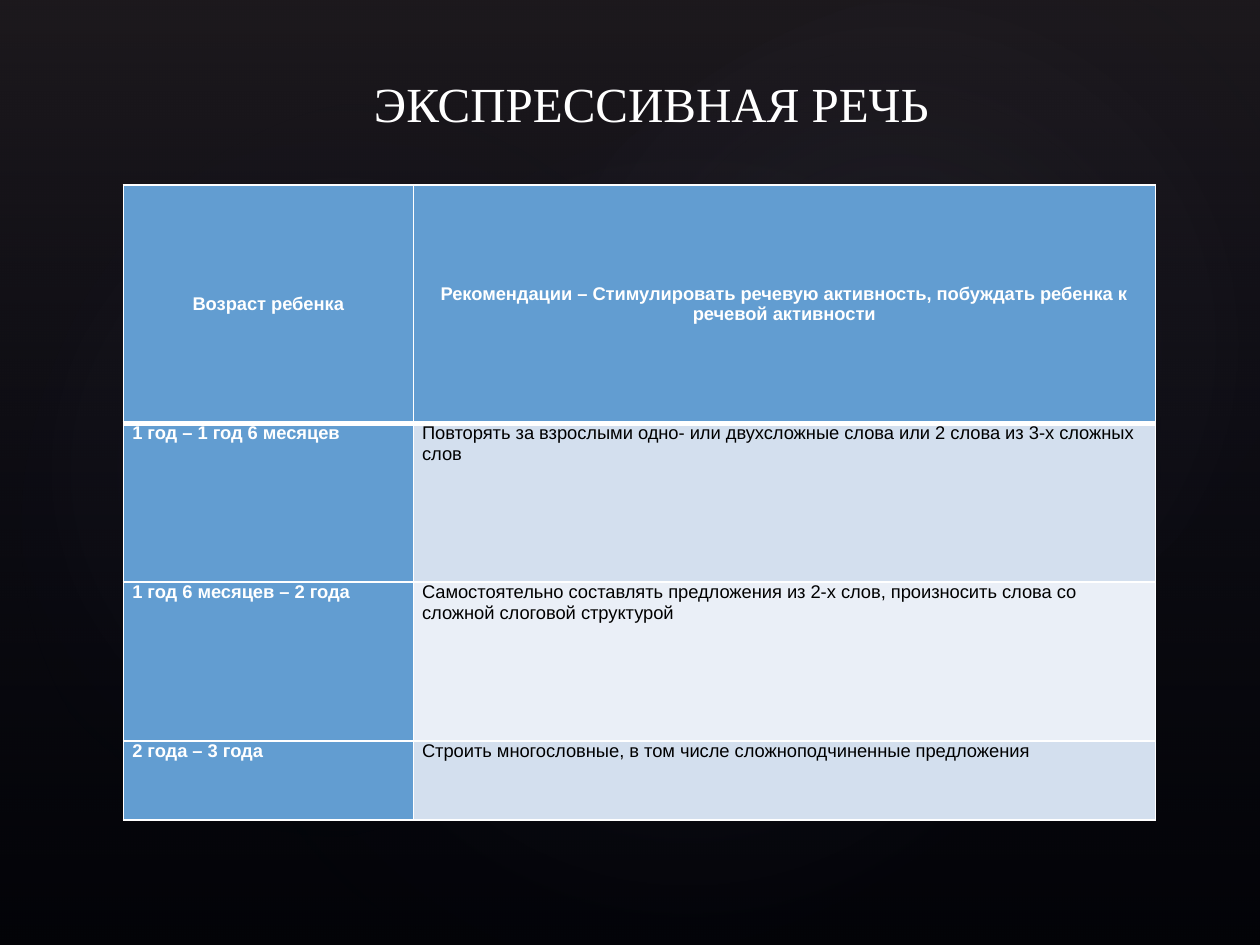
from pptx import Presentation
from pptx.dml.color import RGBColor
from pptx.enum.shapes import MSO_SHAPE
from pptx.enum.text import MSO_ANCHOR, PP_ALIGN
from pptx.oxml import parse_xml
from pptx.oxml.ns import nsdecls, qn
from pptx.util import Inches, Pt

COLORS = {
    "back": "000000",
    "veil": "504652",
    "base": "242852",
    "glow": "C4BCC6",
    "white": "FFFFFF",
    "black": "000000",
    "blue": "629DD1",
    "band": "D3DFEE",
    "pale": "EAEFF7",
}
LINEAR = '<a:lin ang="5400000" scaled="0"/>'
RADIAL = ('<a:path path="circle"><a:fillToRect l="50000" t="50000" '
          'r="50000" b="50000"/></a:path>')
GLOWS = [
    ((1.5, 1.14, 7.92, 6.24), 328.7, 7),
    ((-0.3, 1.28, 6.06, 4.9), 294.3, 8),
    ((3.58, 0.13, 7.09, 5.2), 328.7, 8),
]
HEAD = ("Возраст ребенка",
        "Рекомендации – Стимулировать речевую активность, "
        "побуждать ребенка к речевой активности")
ROWS = [
    ("1 год – 1 год 6 месяцев",
     "Повторять за взрослыми одно- или двухсложные слова "
     "или 2 слова из 3-х сложных слов"),
    ("1 год 6 месяцев – 2 года",
     "Самостоятельно составлять предложения из 2-х слов, "
     "произносить слова со сложной слоговой структурой"),
    ("2 года – 3 года",
     "Строить многословные, в том числе сложноподчиненные предложения"),
]
COLS = [2.3, 5.89]
HEIGHTS = [1.89, 1.26, 1.26, 0.63]


def rgb(name):
    return RGBColor.from_string(COLORS[name])


def write(frame, text, size=10.5, font="Arial", color="white", bold=False,
          align=PP_ALIGN.LEFT):
    frame.word_wrap = True
    para = frame.paragraphs[0]
    para.alignment = align
    run = para.add_run()
    run.text = text
    run.font.size = Pt(size)
    run.font.name = font
    run.font.bold = bold
    run.font.color.rgb = rgb(color)


def add_wash(slide, box, kind, stops, shade, turn=0):
    shape = slide.shapes.add_shape(kind, *map(Inches, box))
    shape.shadow.inherit = False
    shape.line.fill.background()
    shape.rotation = turn
    shape.fill.background()
    marks = "".join(
        f'<a:gs pos="{pos * 1000}"><a:srgbClr val="{COLORS[name]}">'
        f'<a:alpha val="{alpha * 1000}"/></a:srgbClr></a:gs>'
        for pos, name, alpha in stops)
    grad = parse_xml(f'<a:gradFill {nsdecls("a")} rotWithShape="1">'
                     f'<a:gsLst>{marks}</a:gsLst>{shade}</a:gradFill>')
    props = shape.element.spPr
    props.replace(props.find(qn("a:noFill")), grad)


def add_back(slide, box):
    fill = slide.background.fill
    fill.solid()
    fill.fore_color.rgb = rgb("back")
    add_wash(slide, box, MSO_SHAPE.RECTANGLE,
             [(0, "veil", 36), (100, "base", 10)], LINEAR)
    left, top = box[:2]
    for (x, y, wide, high), turn, alpha in GLOWS:
        add_wash(slide, (left + x, top + y, wide, high), MSO_SHAPE.OVAL,
                 [(0, "glow", alpha), (58, "base", 0)], RADIAL, turn)


def add_title(slide, box):
    frame = slide.shapes.add_textbox(*map(Inches, box)).text_frame
    frame.vertical_anchor = MSO_ANCHOR.MIDDLE
    write(frame, "ЭКСПРЕССИВНАЯ РЕЧЬ", size=28, font="Times New Roman")


def edge_cell(cell, sides):
    props = cell._tc.get_or_add_tcPr()
    for side, width in sides.items():
        props.append(parse_xml(
            f'<a:ln{side} {nsdecls("a")} w="{Pt(width)}"><a:solidFill>'
            f'<a:srgbClr val="{COLORS["white"]}"/></a:solidFill></a:ln{side}>'))


def add_grid(slide, box):
    table = slide.shapes.add_table(
        len(HEIGHTS), len(COLS), *map(Inches, box)).table
    for col, width in zip(table.columns, COLS):
        col.width = Inches(width)
    for row, height in zip(table.rows, HEIGHTS):
        row.height = Inches(height)
    for r, texts in enumerate([HEAD, *ROWS]):
        for c, text in enumerate(texts):
            cell = table.cell(r, c)
            top = r == 0
            key = top or c == 0
            cell.margin_left = cell.margin_right = Inches(0.07)
            cell.margin_top = cell.margin_bottom = 0
            cell.vertical_anchor = MSO_ANCHOR.MIDDLE if top else MSO_ANCHOR.TOP
            edge_cell(cell, {"L": 1, "R": 1, "T": 3 if r == 1 else 1,
                             "B": 3 if top else 1})
            cell.fill.solid()
            band = "band" if r % 2 else "pale"
            cell.fill.fore_color.rgb = rgb("blue" if key else band)
            write(cell.text_frame, text, bold=key,
                  color="white" if key else "black",
                  align=PP_ALIGN.CENTER if top else PP_ALIGN.LEFT)


def main():
    deck = Presentation()
    deck.slide_width = Inches(10)
    deck.slide_height = Inches(7.5)
    slide = deck.slides.add_slide(deck.slide_layouts[6])
    add_back(slide, (0, 0, 10, 7.5))
    add_grid(slide, (0.98, 1.47, sum(COLS), sum(HEIGHTS)))
    add_title(slide, (2.87, 0.52, 4.86, 0.59))
    deck.save("out.pptx")


if __name__ == "__main__":
    main()
